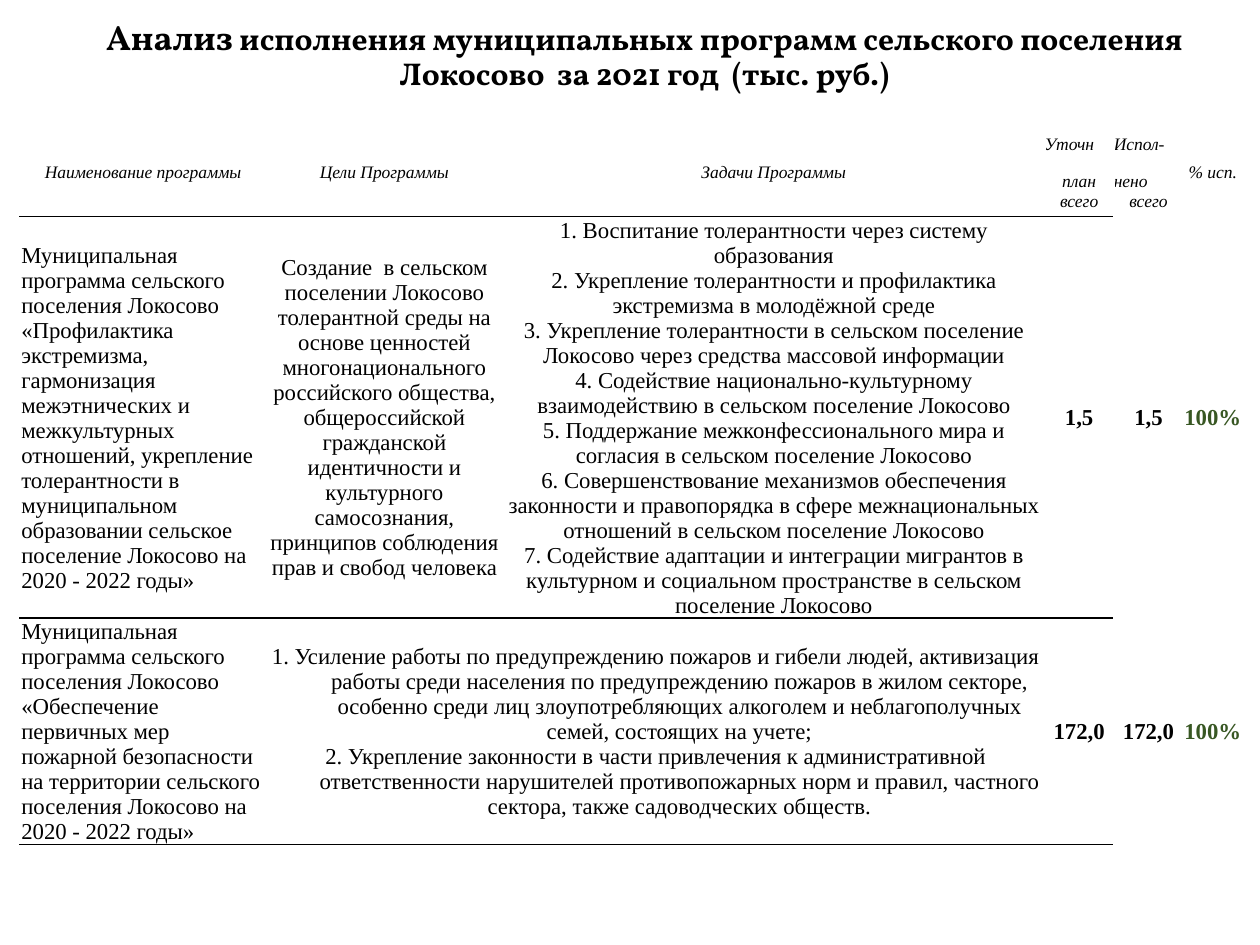
from lxml import etree
from pptx import Presentation
from pptx import util as u
from pptx.dml.color import RGBColor
from pptx.enum import text
from pptx.oxml import ns

COLORS = {"ink": "000000", "paper": "FFFFFF", "done": "385723"}
BODY_FONT = "Times New Roman"
TITLE_FONT = "Vollkorn"
LEFT, CENTER = text.PP_ALIGN.LEFT, text.PP_ALIGN.CENTER

COLUMN_WIDTHS = [1.95, 1.88, 4.3, 0.55, 0.55, 0.47]
ROW_HEIGHTS = [0.7, 1.51, 1.11]

HEADERS = ["Наименование программы", "Цели Программы", "Задачи Программы"]
PLAN_HEADER = [("Уточн", LEFT, 0), ("план", CENTER, 10.5), ("всего", CENTER, 0)]
DONE_HEADER = [("Испол-", LEFT, 0), ("нено", LEFT, 10.5), ("всего", CENTER, 0)]

TOLERANCE_NAME = (
    "Муниципальная программа сельского поселения Локосово «Профилактика экстремизма, "
    "гармонизация межэтнических и межкультурных отношений, укрепление толерантности в "
    "муниципальном образовании сельское поселение Локосово на 2020 - 2022 годы»")
TOLERANCE_GOAL = (
    "Создание  в сельском поселении Локосово толерантной среды на основе ценностей "
    "многонационального российского общества, общероссийской гражданской идентичности и "
    "культурного самосознания, принципов соблюдения прав и свобод человека")
TOLERANCE_TASKS = [
    "1. Воспитание толерантности через систему образования",
    "2. Укрепление толерантности и профилактика экстремизма в молодёжной среде",
    "3. Укрепление толерантности в сельском поселение Локосово через средства массовой "
    "информации",
    "4. Содействие национально-культурному взаимодействию в сельском поселение Локосово",
    "5. Поддержание межконфессионального мира и согласия в сельском поселение Локосово",
    "6. Совершенствование механизмов обеспечения законности и правопорядка в сфере "
    "межнациональных отношений в сельском поселение Локосово",
    "7. Содействие адаптации и интеграции мигрантов в культурном и социальном "
    "пространстве в сельском поселение Локосово",
]
FIRE_NAME = (
    "Муниципальная программа сельского поселения Локосово «Обеспечение первичных мер "
    "пожарной безопасности на территории сельского поселения Локосово на 2020 - 2022 годы»")
FIRE_TASKS = [
    "1. Усиление работы по предупреждению пожаров и гибели людей, активизация работы среди "
    "населения по предупреждению пожаров в жилом секторе, особенно среди лиц "
    "злоупотребляющих алкоголем и неблагополучных семей, состоящих на учете;",
    "2. Укрепление законности в части привлечения к административной ответственности "
    "нарушителей противопожарных норм и правил, частного сектора, также садоводческих "
    "обществ.",
]


def add_run(p, words, size, font=BODY_FONT, color="ink", bold=False, italic=False):
    r = p.add_run()
    r.text = words
    r.font.name = font
    r.font.size = u.Pt(size)
    r.font.bold = bold
    r.font.italic = italic
    r.font.color.rgb = RGBColor.from_string(COLORS[color])


def add_title(s):
    sp = s.shapes.title
    sp.left, sp.top = u.Inches(0.23), u.Inches(0.16)
    sp.width, sp.height = u.Inches(9.77), u.Inches(0.58)
    tf = sp.text_frame
    tf.auto_size = text.MSO_AUTO_SIZE.NONE
    tf.word_wrap = True
    tf.vertical_anchor = text.MSO_ANCHOR.MIDDLE
    p = tf.paragraphs[0]
    p.alignment = CENTER
    p.line_spacing = 0.9
    add_run(p, "Анализ", 20, TITLE_FONT, bold=True)
    add_run(p, " исполнения муниципальных программ сельского поселения Локосово"
               "  за 2021 год  (тыс. руб.)", 18, TITLE_FONT, bold=True)


def set_borders(cell, top, bottom, bottom_width=1):
    """White sides, with the given colours above and below."""
    tc_pr = cell._tc.get_or_add_tcPr()
    sides = [("lnL", "paper", 1), ("lnR", "paper", 1),
             ("lnT", top, 1), ("lnB", bottom, bottom_width)]
    for i, (tag, color, width) in enumerate(sides):
        ln = etree.Element(ns.qn(f"a:{tag}"), w=str(u.Pt(width)))
        fill = etree.SubElement(ln, ns.qn("a:solidFill"))
        etree.SubElement(fill, ns.qn("a:srgbClr"), val=COLORS[color])
        tc_pr.insert(i, ln)


def format_cell(cell, row, column):
    cell.fill.solid()
    cell.fill.fore_color.rgb = RGBColor.from_string(COLORS["paper"])
    cell.vertical_anchor = text.MSO_ANCHOR.MIDDLE
    inset = u.Inches(0.01 if row else 0)
    cell.margin_left = cell.margin_right = cell.margin_top = inset
    cell.margin_bottom = 0
    ruled = column < 4
    set_borders(cell,
                top="ink" if ruled and row else "paper",
                bottom="ink" if ruled else "paper",
                bottom_width=1 if ruled or row else 3)


def fill_cell(cell, lines, size=13, hanging=0, **style):
    """Write lines given as (words, alignment, points before)."""
    tf = cell.text_frame
    for i, (words, alignment, before) in enumerate(lines):
        p = tf.add_paragraph() if i else tf.paragraphs[0]
        p.alignment = alignment
        if before:
            p.space_before = u.Pt(before)
        if hanging:
            p_pr = p._p.get_or_add_pPr()
            p_pr.set("marL", str(u.Inches(hanging)))
            p_pr.set("indent", str(-u.Inches(hanging)))
        add_run(p, words, size, **style)


def centered(*lines):
    return [(words, CENTER, 0) for words in lines]


def fill_figures(table, row, amount):
    """Plan, actual and percentage of one programme."""
    for column, value, color in [(3, amount, "ink"), (4, amount, "ink"), (5, "100%", "done")]:
        fill_cell(table.cell(row, column), centered(value), color=color, bold=True)


def add_programme_table(s):
    frame = s.shapes.add_table(len(ROW_HEIGHTS), len(COLUMN_WIDTHS), u.Inches(0.16),
                               u.Inches(1.02), u.Inches(9.69), u.Inches(6.14))
    table = frame.table
    table.first_row = table.horz_banding = False
    for column, width in zip(table.columns, COLUMN_WIDTHS):
        column.width = u.Inches(width)
    for row, height in zip(table.rows, ROW_HEIGHTS):
        row.height = u.Inches(height)
    for i in range(len(ROW_HEIGHTS)):
        for j in range(len(COLUMN_WIDTHS)):
            format_cell(table.cell(i, j), i, j)
    table.cell(2, 1).merge(table.cell(2, 2))

    headers = [centered(h) for h in HEADERS] + [PLAN_HEADER, DONE_HEADER, centered("% исп.")]
    for j, lines in enumerate(headers):
        fill_cell(table.cell(0, j), lines, size=10, italic=True)

    fill_cell(table.cell(1, 0), [(TOLERANCE_NAME, LEFT, 0)])
    fill_cell(table.cell(1, 1), centered(TOLERANCE_GOAL))
    fill_cell(table.cell(1, 2), centered(*TOLERANCE_TASKS))
    fill_figures(table, 1, "1,5")

    fill_cell(table.cell(2, 0), [(FIRE_NAME, LEFT, 0)])
    fill_cell(table.cell(2, 1), centered(*FIRE_TASKS), hanging=0.38)
    fill_figures(table, 2, "172,0")


def main():
    prs = Presentation()
    prs.slide_width, prs.slide_height = u.Inches(10), u.Inches(7.5)
    s = prs.slides.add_slide(prs.slide_layouts.get_by_name("Title Only"))
    add_title(s)
    add_programme_table(s)
    prs.save("out.pptx")


if __name__ == "__main__":
    main()
